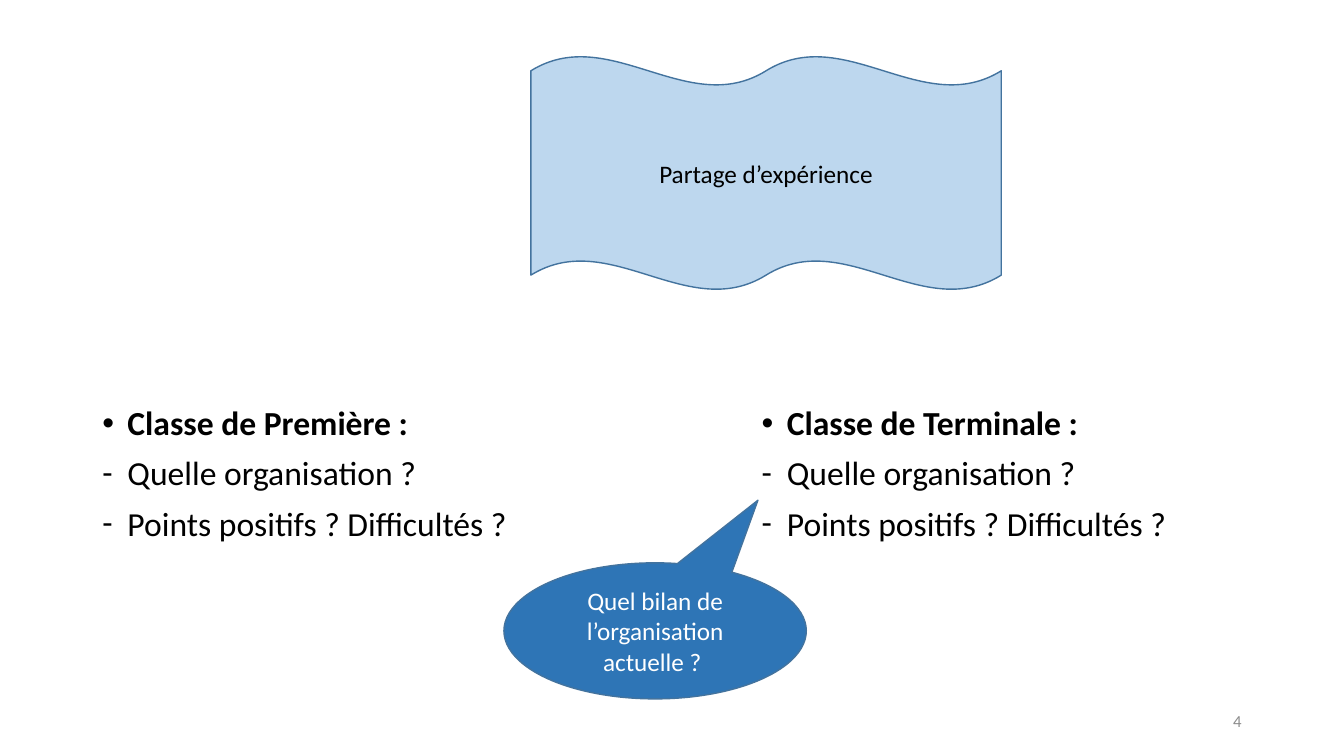
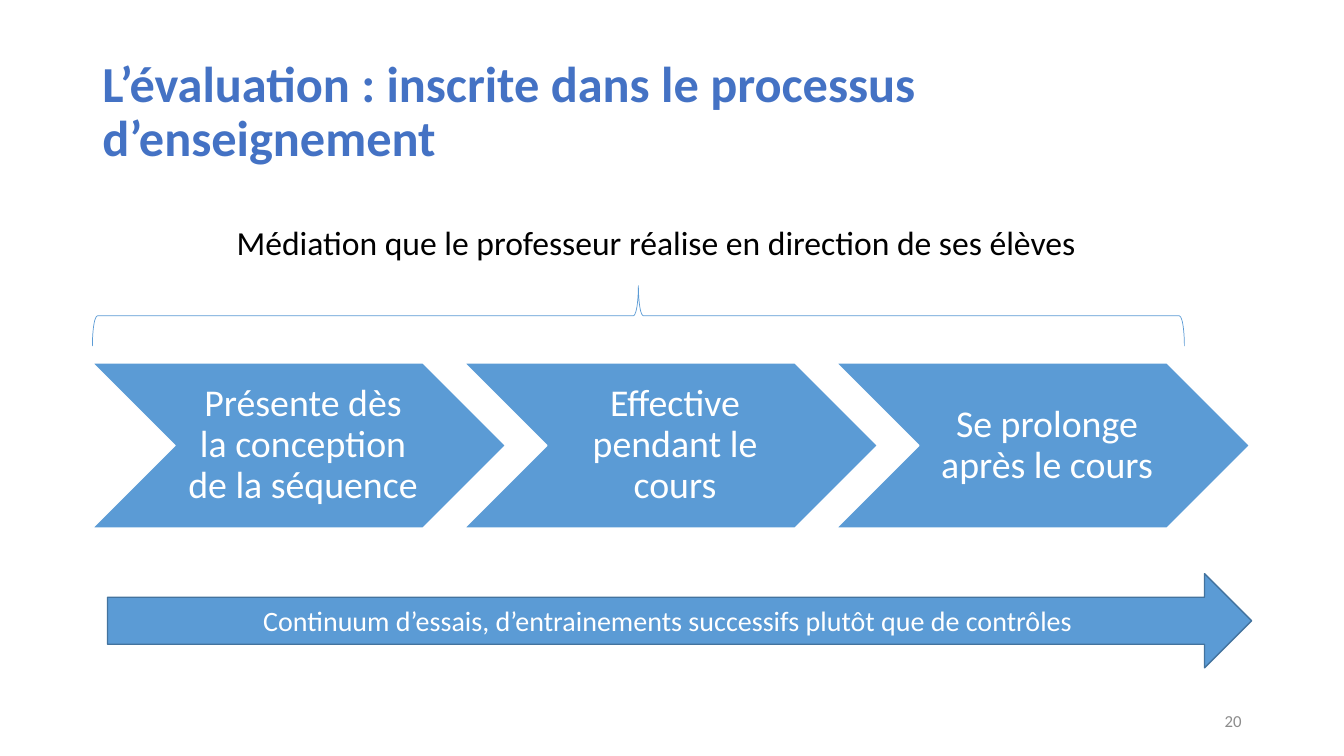
from dataclasses import dataclass
from typing import NamedTuple

from lxml.etree import SubElement
from pptx import Presentation
from pptx.dml.color import RGBColor
from pptx.enum.shapes import MSO_SHAPE
from pptx.enum.text import MSO_ANCHOR, PP_ALIGN
from pptx.oxml.ns import qn
from pptx.shapes.autoshape import Shape
from pptx.slide import Slide
from pptx.text.text import TextFrame
from pptx.util import Inches, Pt

# The slide is a grid of 160 columns by 90 rows
CELL = Inches(1 / 12)
COLS, ROWS = 160, 90


@dataclass(frozen=True)
class Theme:
    font: str = "Calibri"
    ink: str = "000000"
    white: str = "FFFFFF"
    head: str = "4472C4"
    blue: str = "5B9BD5"
    pale: str = "BDD7EE"
    deep: str = "2E75B6"
    edge: str = "43739E"
    grey: str = "8C8C8C"
    title: int = 36
    step: int = 27
    body: int = 24
    band: int = 20
    note: int = 18
    foot: int = 12


class Box(NamedTuple):
    col: float
    row: float
    wide: float
    high: float


class Style(NamedTuple):
    size: int
    color: str
    bold: bool = False
    align: PP_ALIGN = PP_ALIGN.LEFT
    lead: float = 1.0


class Item(NamedTuple):
    mark: str
    text: str
    bold: bool = False


class Panel(NamedTuple):
    kind: MSO_SHAPE
    box: Box
    fill: str
    line: str
    text: str
    style: Style


THEME = Theme()
MID = PP_ALIGN.CENTER
TITLE = Style(THEME.title, THEME.head, bold=True, lead=0.9)
BODY = Style(THEME.body, THEME.ink)
STEP = Style(THEME.step, THEME.white, align=MID, lead=0.9)
FOOT = Style(THEME.foot, THEME.grey, align=PP_ALIGN.RIGHT)
LEFT, SPAN = 11, 138


def place(box: Box) -> list[int]:
    return [round(n * CELL) for n in box]


def write(frame: TextFrame, lines: list[str], style: Style,
          anchor: MSO_ANCHOR = MSO_ANCHOR.MIDDLE) -> None:
    frame.word_wrap = True
    frame.vertical_anchor = anchor
    for i, line in enumerate(lines):
        para = frame.paragraphs[0] if i == 0 else frame.add_paragraph()
        para.text = line
        para.alignment = style.align
        para.line_spacing = style.lead
        font = para.font
        font.name, font.size, font.bold = THEME.font, Pt(style.size), style.bold
        font.color.rgb = RGBColor.from_string(style.color)


def add_text(slide: Slide, box: Box, text: str, style: Style,
             anchor: MSO_ANCHOR = MSO_ANCHOR.MIDDLE) -> None:
    write(slide.shapes.add_textbox(*place(box)).text_frame, [text], style, anchor)


def add_list(slide: Slide, box: Box, items: list[Item]) -> None:
    frame = slide.shapes.add_textbox(*place(box)).text_frame
    write(frame, [item.text for item in items], BODY._replace(lead=0.9),
          MSO_ANCHOR.TOP)
    for i, (para, item) in enumerate(zip(frame.paragraphs, items)):
        para.font.bold = item.bold
        para.space_before = Pt(10 if i else 0)
        props = para._p.get_or_add_pPr()
        props.set("marL", str(Inches(0.25)))
        props.set("indent", str(-Inches(0.25)))
        face = SubElement(props, qn("a:buFont"))
        face.set("typeface", "Arial" if item.mark == "•" else THEME.font)
        SubElement(props, qn("a:buChar")).set("char", item.mark)
        # Bullets come after spacing but before the default run style
        props.append(props.find(qn("a:defRPr")))


def add_panel(slide: Slide, panel: Panel) -> Shape:
    shape = slide.shapes.add_shape(panel.kind, *place(panel.box))
    shape.shadow.inherit = False
    shape.fill.solid()
    shape.fill.fore_color.rgb = RGBColor.from_string(panel.fill)
    shape.line.color.rgb = RGBColor.from_string(panel.line)
    shape.line.width = Pt(1)
    write(shape.text_frame, [panel.text], panel.style)
    return shape


def add_brace(slide: Slide, box: Box) -> None:
    # Turned a quarter: the unturned frame shares the centre of the box
    x, y = box.col + box.wide / 2, box.row + box.high / 2
    frame = Box(x - box.high / 2, y - box.wide / 2, box.high, box.wide)
    brace = slide.shapes.add_shape(MSO_SHAPE.RIGHT_BRACE, *place(frame))
    brace.rotation = 270
    brace.shadow.inherit = False
    brace.fill.background()
    brace.line.color.rgb = RGBColor.from_string(THEME.blue)
    brace.line.width = Pt(0.5)


def new_slide(deck: Presentation, number: int) -> Slide:
    slide = deck.slides.add_slide(deck.slide_layouts[6])
    add_text(slide, Box(113, 83.4, 36, 4.8), str(number), FOOT)
    return slide


def share_slide(deck: Presentation) -> None:
    slide = new_slide(deck, 4)

    # One list for each class
    asks = [Item("-", "Quelle organisation ?"),
            Item("-", "Points positifs ? Difficultés ?")]
    wide = 59.5
    for col, name in ((LEFT, "Première"), (LEFT + SPAN - wide, "Terminale")):
        head = Item("•", f"Classe de {name} :", bold=True)
        add_list(slide, Box(col, 47.8, wide, 22.2), [head, *asks])

    # Banner and question bubble
    add_panel(slide, Panel(
        MSO_SHAPE.DOUBLE_WAVE, Box(63.2, 6.7, 56, 27.8), THEME.pale, THEME.edge,
        "Partage d’expérience", Style(THEME.note, THEME.ink, align=MID)))
    bubble = add_panel(slide, Panel(
        MSO_SHAPE.OVAL_CALLOUT, Box(60, 67, 36, 16.2), THEME.deep, THEME.edge,
        "Quel bilan de l’organisation actuelle ? ",
        Style(THEME.note, THEME.white, align=MID)))
    bubble.adjustments[0] = 0.34
    bubble.adjustments[1] = -0.96


def process_slide(deck: Presentation) -> None:
    slide = new_slide(deck, 20)
    add_text(slide, Box(LEFT, 4.8, SPAN, 17.4),
             "L’évaluation : inscrite dans le processus d’enseignement", TITLE)

    # Caption above the brace
    add_text(slide, Box(27, 25.8, 105.8, 6),
             "Médiation que le professeur réalise en direction de ses élèves",
             BODY, MSO_ANCHOR.TOP)
    add_brace(slide, Box(LEFT, 34, 130, 7.2))

    # Chevrons, each overlapping the one before by a tenth
    steps = ["Présente dès la conception de la séquence",
             "Effective pendant le cours", "Se prolonge après le cours"]
    wide = 49.2
    for i, text in enumerate(steps):
        box = Box(LEFT + i * 0.9 * wide, 43.2, wide, 0.4 * wide)
        frame = add_panel(slide, Panel(
            MSO_SHAPE.CHEVRON, box, THEME.blue, THEME.white, text, STEP)).text_frame
        frame.margin_left = Inches(0.12)
        frame.margin_right = frame.margin_top = frame.margin_bottom = Inches(0.04)

    # Arrow along the foot
    add_panel(slide, Panel(
        MSO_SHAPE.RIGHT_ARROW, Box(12.8, 68.3, 136.2, 11.2), THEME.blue, THEME.edge,
        "Continuum d’essais, d’entrainements successifs plutôt que de contrôles",
        Style(THEME.band, THEME.white, align=MID)))


def main() -> None:
    deck = Presentation()
    deck.slide_width, deck.slide_height = COLS * CELL, ROWS * CELL
    share_slide(deck)
    process_slide(deck)
    deck.save("out.pptx")


if __name__ == "__main__":
    main()
